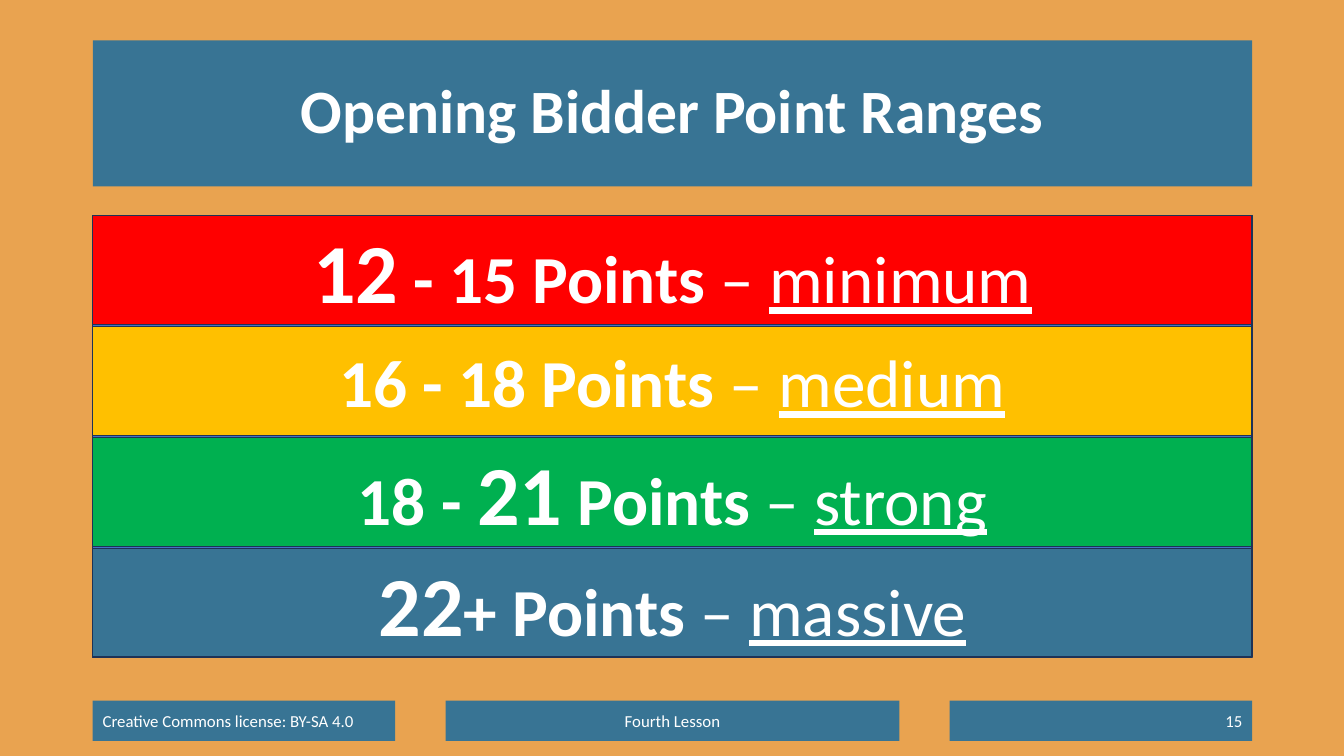
"""Build the slide on point ranges for the opening bidder."""
from pptx import Presentation
from pptx.dml.color import RGBColor
from pptx.enum import shapes, text
from pptx.util import Inches, Pt

FONT = "Calibri"
ORANGE = RGBColor(0xE9, 0xA3, 0x50)
TEAL = RGBColor(0x38, 0x74, 0x94)
WHITE = RGBColor(0xFF, 0xFF, 0xFF)
BLUE = RGBColor(0x44, 0x72, 0xC4)
NAVY = RGBColor(0x1E, 0x32, 0x56)
RED = RGBColor(0xFF, 0x00, 0x00)
AMBER = RGBColor(0xFF, 0xC0, 0x00)
GREEN = RGBColor(0x00, 0xB0, 0x50)

LEFT, WIDTH = 0.92, 11.5
STACK_TOP, STACK_HEIGHT, BAND_HEIGHT = 2.14, 4.38, 1.08
FOOTER_TOP, FOOTER_HEIGHT = 6.95, 0.4
LARGE, NORMAL = 60, 48

RANGES = [
    (RED, [("12", LARGE), (" - 15 Points ", NORMAL)], "minimum"),
    (AMBER, [("16 - 18 Points ", NORMAL)], "medium"),
    (GREEN, [("18 - ", NORMAL), ("21", LARGE), (" Points ", NORMAL)], "strong"),
    (TEAL, [("22", LARGE), ("+ Points ", NORMAL)], "massive"),
]
FOOTERS = [
    (0.92, 3, "Creative Commons license: BY-SA 4.0", text.PP_ALIGN.LEFT),
    (4.42, 4.5, "Fourth Lesson", text.PP_ALIGN.CENTER),
    (9.42, 3, "15", text.PP_ALIGN.RIGHT),
]


def fill_solid(target, color):
    """Give a shape or background a solid fill."""
    target.fill.solid()
    target.fill.fore_color.rgb = color


def add_box(slide, left, top, width, height, color, outline=None):
    """Add a flat rectangle with an optional thin outline."""
    box = slide.shapes.add_shape(
        shapes.MSO_SHAPE.RECTANGLE,
        Inches(left), Inches(top), Inches(width), Inches(height))
    box.shadow.inherit = False
    fill_solid(box, color)
    if outline is None:
        box.line.fill.background()
    else:
        box.line.color.rgb = outline
        box.line.width = Pt(1)
    return box


def start_text(box, align):
    """Prepare a vertically centred paragraph and return it."""
    frame = box.text_frame
    frame.word_wrap = True
    frame.auto_size = text.MSO_AUTO_SIZE.NONE
    frame.vertical_anchor = text.MSO_ANCHOR.MIDDLE
    paragraph = frame.paragraphs[0]
    paragraph.alignment = align
    return paragraph


def add_run(paragraph, words, size, bold=False, underline=None):
    """Append one white run."""
    run = paragraph.add_run()
    run.text = words
    run.font.name = FONT
    run.font.size = Pt(size)
    run.font.bold = bold
    run.font.underline = underline
    run.font.color.rgb = WHITE


def set_title(slide, words):
    """Place and format the title placeholder."""
    title = slide.shapes.title
    title.left, title.top = Inches(LEFT), Inches(0.4)
    title.width, title.height = Inches(WIDTH), Inches(1.45)
    fill_solid(title, TEAL)
    paragraph = start_text(title, text.PP_ALIGN.CENTER)
    paragraph.line_spacing = 0.9
    add_run(paragraph, words, 44, bold=True)


def add_ranges(slide):
    """Stack the point-range bands evenly over their backing panel."""
    add_box(slide, LEFT, STACK_TOP, WIDTH, STACK_HEIGHT, BLUE, NAVY)
    pitch = (STACK_HEIGHT - BAND_HEIGHT) / (len(RANGES) - 1)
    for index, (color, points, strength) in enumerate(RANGES):
        band = add_box(slide, LEFT, STACK_TOP + index * pitch, WIDTH,
                       BAND_HEIGHT, color, NAVY)
        paragraph = start_text(band, text.PP_ALIGN.CENTER)
        for words, size in points:
            add_run(paragraph, words, size, bold=True)
        add_run(paragraph, "– ", NORMAL)
        add_run(paragraph, strength, NORMAL, underline=True)


def add_footers(slide):
    """Add the licence, lesson and page-number boxes."""
    for left, width, words, align in FOOTERS:
        footer = add_box(slide, left, FOOTER_TOP, width, FOOTER_HEIGHT, TEAL)
        add_run(start_text(footer, align), words, 12)


def main():
    """Build and save the presentation."""
    deck = Presentation()
    deck.slide_width, deck.slide_height = Inches(13.33), Inches(7.5)
    slide = deck.slides.add_slide(deck.slide_layouts.get_by_name("Title Only"))
    fill_solid(slide.background, ORANGE)
    set_title(slide, "Opening Bidder Point Ranges")
    add_ranges(slide)
    add_footers(slide)
    deck.save("out.pptx")


if __name__ == "__main__":
    main()
